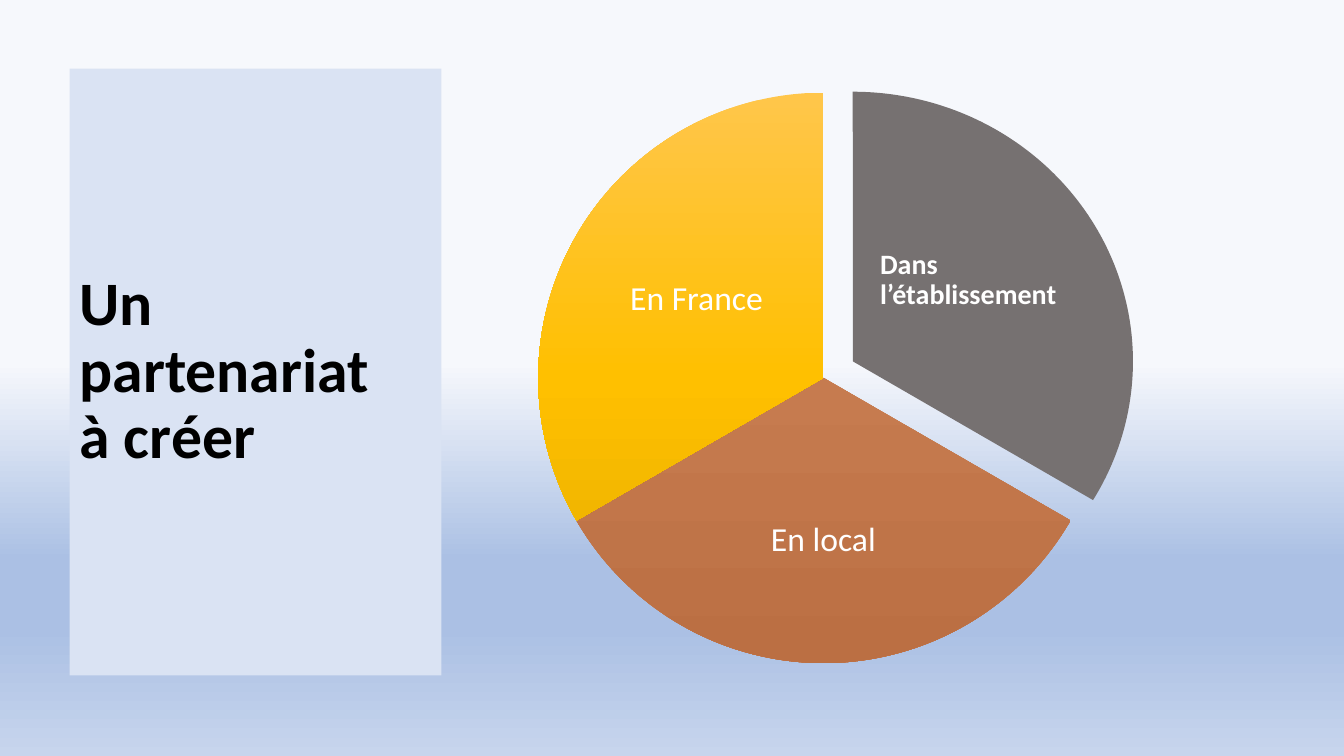
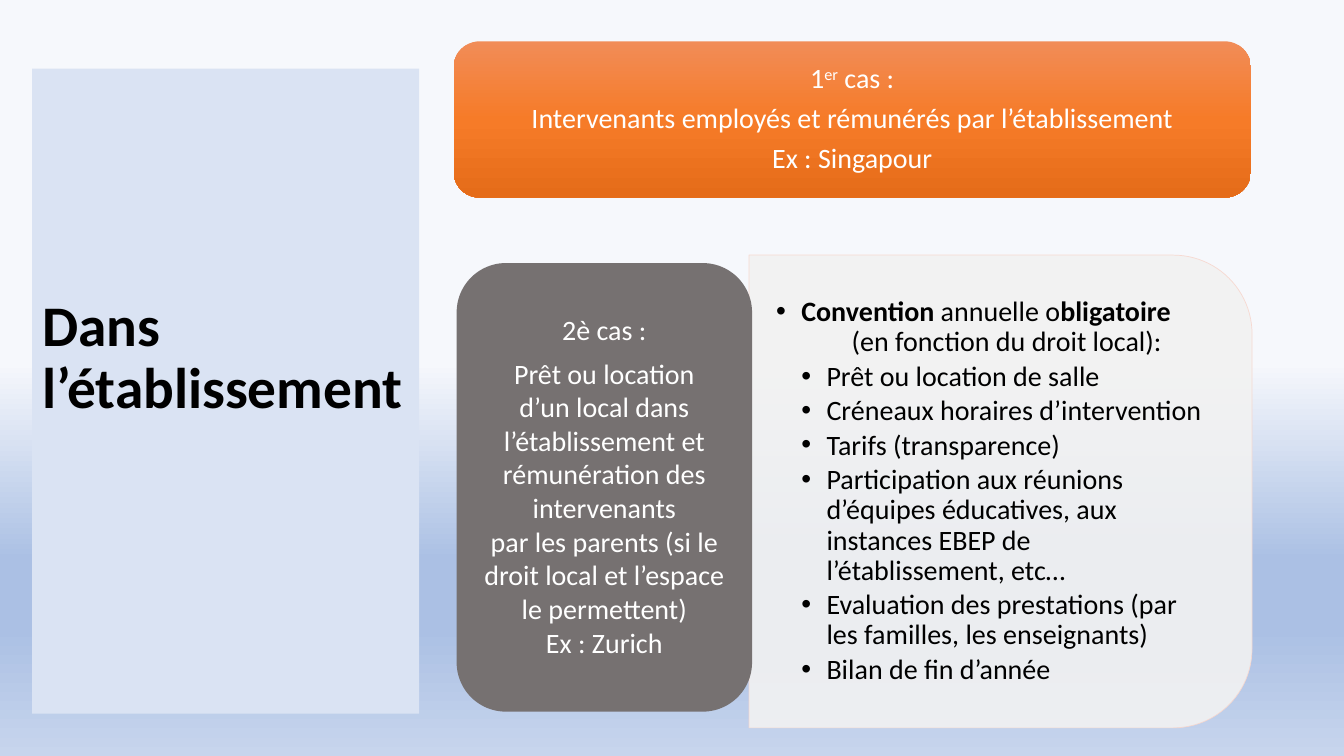
import pptx
import pptx.dml.color
import pptx.enum.shapes
import pptx.enum.text
import pptx.oxml
import pptx.oxml.ns
import pptx.util
from lxml import etree

Pt = pptx.util.Pt
KIND = pptx.enum.shapes.MSO_SHAPE
ALIGN = pptx.enum.text.PP_ALIGN
qn = pptx.oxml.ns.qn

FONT = "Calibri"
HUES = {
    "panel": "DAE3F3", "grey": "767171", "black": "000000",
    "white": "FFFFFF", "list": "F2F2F2", "edge": "F8D7CE",
}
# Gradients run from top to bottom: (percent, colour)
FADES = {
    "back": [(48, "F6F8FC"), (74, "ABC0E4"), (83, "ABC0E4"), (100, "C7D5ED")],
    "brown": [(0, "CF8459"), (50, "C67B4F"), (100, "BB6F43")],
    "gold": [(0, "FFC64B"), (50, "FFC000"), (100, "E3AB00")],
    "orange": [(0, "F18C57"), (50, "F67B28"), (100, "E56C19")],
}


def rgb(name):
    return pptx.dml.color.RGBColor.from_string(HUES[name])


# Fills
def fade(fill, root, name):
    fill.gradient()
    fill.gradient_angle = 270
    stops = root.find(".//" + qn("a:gsLst"))
    for old in list(stops):
        stops.remove(old)
    for pos, hue in FADES[name]:
        stop = etree.SubElement(stops, qn("a:gs"), pos=str(pos * 1000))
        etree.SubElement(stop, qn("a:srgbClr"), val=hue)


def clear(root, part):
    for hue in root.iter(qn("a:srgbClr")):
        etree.SubElement(hue, qn("a:alpha"), val=str(part * 1000))


# Shapes
def block(slide, kind, box, fill):
    shape = slide.shapes.add_shape(kind, *map(Pt, box))
    shape.shadow.inherit = False
    shape.line.fill.background()
    if fill in FADES:
        fade(shape.fill, shape.element, fill)
    else:
        shape.fill.solid()
        shape.fill.fore_color.rgb = rgb(fill)
    return shape


def frame(shape, side, top, base=None):
    text = shape.text_frame
    text.word_wrap = True
    text.vertical_anchor = pptx.enum.text.MSO_ANCHOR.MIDDLE
    text.margin_left = text.margin_right = Pt(side)
    text.margin_top = Pt(top)
    text.margin_bottom = Pt(top if base is None else base)
    return text


# Text
def add_run(para, words, size, hue, bold=False, lift=0):
    run = para.add_run()
    run.text = words
    font = run.font
    font.name, font.size, font.bold = FONT, Pt(size), bold
    font.color.rgb = rgb(hue)
    if lift:
        run._r.get_or_add_rPr().set("baseline", str(lift * 1000))


def add_para(text, runs, size=20, hue="white", align=ALIGN.CENTER,
             lead=0.9, after=0, left=0, bullet=False):
    """Each run is a tuple: words, then bold and lift if needed."""
    first = text.paragraphs[0]
    para = text.add_paragraph() if first.runs else first
    para.alignment, para.line_spacing = align, lead
    para.space_after = Pt(after)
    props = para._p.get_or_add_pPr()
    if left:
        props.set("marL", str(Pt(left)))
    if bullet:
        props.set("indent", str(Pt(-18)))
        etree.SubElement(props, qn("a:buFont"), typeface="Arial")
        etree.SubElement(props, qn("a:buChar"), char="•")
    for words, *style in runs:
        add_run(para, words, size, hue, *style)
    return para


def title(slide, box, lines, size, base=3.6):
    text = frame(block(slide, KIND.RECTANGLE, box, "panel"), 7.2, 3.6, base)
    para = add_para(text, [], align=ALIGN.LEFT)
    for spot, line in enumerate(lines):
        if spot:
            para.add_line_break()
        add_run(para, line, size, "black", True)


def slice_of(slide, box, start, end, fill, spot, words, **style):
    pie = block(slide, KIND.PIE, box, fill)
    # One adjustment unit is 100000 sixtieths of a milli-degree step
    pie.adjustments[0], pie.adjustments[1] = start * 0.6, end * 0.6
    label = slide.shapes.add_textbox(*map(Pt, spot))
    add_para(frame(label, 2.2, 2.2), words, **style)


# Slides
def partners(slide):
    title(slide, (49.7, 49, 265.7, 433.4), ["Un partenariat", "à créer"], 44.1)
    disc = (384.5, 66.2, 407.5, 407.5)
    slice_of(slide, (409, 65.5, 400.3, 385.2), 270, 30, "grey",
             (626.4, 136, 135.4, 128.2), [("Dans l’établissement", True)],
             align=ALIGN.LEFT)
    slice_of(slide, disc, 30, 150, "brown", (496, 323.3, 184.3, 126),
             [("En local",)], size=24)
    slice_of(slide, disc, 150, 270, "gold", (428.4, 146.2, 138.2, 136),
             [("En France",)], size=24)


def cases(slide):
    # First case
    text = frame(block(slide, KIND.ROUNDED_RECTANGLE,
                       (324, 29.5, 569.5, 111.6), "orange"), 3.6, 2.2)
    add_para(text, [("1",), ("er", False, 30), (" cas :",)], after=7)
    add_para(text, [("Intervenants employés et rémunérés par l’établissement",)],
             after=7)
    add_para(text, [("Ex : Singapour",)])

    # Panel of terms, turned so that its round corners face right
    panel = block(slide, KIND.ROUND_2_SAME_RECTANGLE,
                  (545.8, 171.4, 337.7, 359.3), "list")
    panel.rotation = 90
    panel.line.color.rgb = rgb("edge")
    panel.line.width = Pt(0.5)
    clear(panel.element, 90)
    label = slide.shapes.add_textbox(Pt(535), Pt(198.7), Pt(342.7), Pt(304.6))
    text = frame(label, 19.4, 10)
    plain = {"hue": "black", "align": ALIGN.LEFT}
    add_para(text, [("Convention", True), (" annuelle o",), ("bligatoire", True)],
             left=18, bullet=True, **plain)
    add_para(text, [("(en fonction du droit local):",)], after=3, left=54, **plain)
    for term in (
        "Prêt ou location de salle",
        "Créneaux horaires d’intervention",
        "Tarifs (transparence)",
        "Participation aux réunions d’équipes éducatives, aux instances EBEP "
        "de l’établissement, etc…",
        "Evaluation des prestations (par les familles, les enseignants)",
        "Bilan de fin d’année",
    ):
        add_para(text, [(term,)], after=3, left=36, bullet=True, **plain)

    # Second case
    text = frame(block(slide, KIND.ROUNDED_RECTANGLE,
                       (326.2, 187.9, 211, 320.4), "grey"), 5.8, 2.9)
    add_para(text, [("2è cas :",)], after=7)
    for line in (
        "Prêt ou location",
        "d’un local dans l’établissement et rémunération des intervenants",
        "par les parents (si le droit local et l’espace le permettent)",
        "Ex : Zurich",
    ):
        add_para(text, [(line,)], lead=1.0)

    title(slide, (23, 49, 276.5, 460.8), ["Dans l’établissement"], 41, 50)


def main():
    deck = pptx.Presentation()
    deck.slide_width, deck.slide_height = Pt(960), Pt(540)
    master = deck.slide_master
    fade(master.background.fill, master.element, "back")
    for build in (partners, cases):
        build(deck.slides.add_slide(deck.slide_layouts[6]))
    deck.save("out.pptx")


if __name__ == "__main__":
    main()
